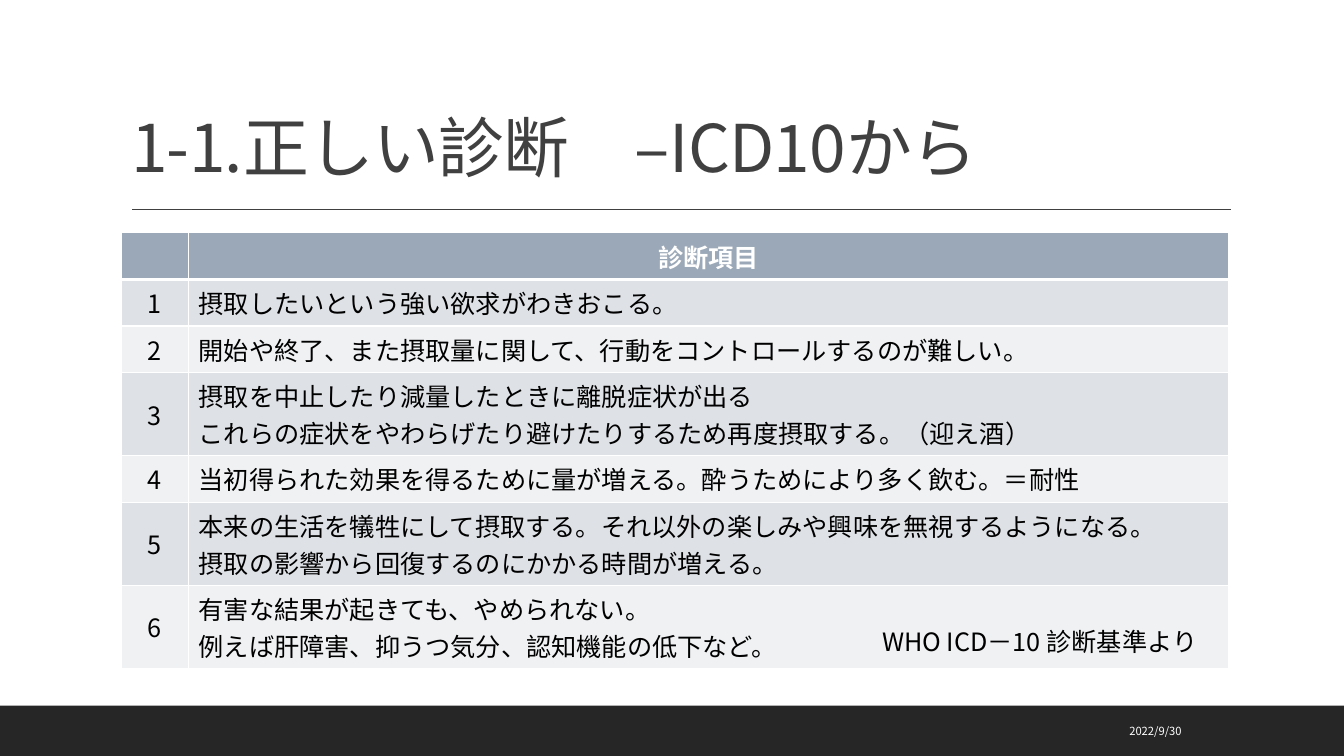
from lxml import etree
from pptx import Presentation
from pptx.dml.color import RGBColor
from pptx.enum import shapes, text
from pptx.oxml import ns
from pptx.util import Inches, Pt

TITLE = "1-1.正しい診断\u3000–ICD10から"
HEADING = "診断項目"
CRITERIA = [
    ["摂取したいという強い欲求がわきおこる。"],
    ["開始や終了、また摂取量に関して、行動をコントロールするのが難しい。"],
    ["摂取を中止したり減量したときに離脱症状が出る",
     "これらの症状をやわらげたり避けたりするため再度摂取する。（迎え酒）"],
    ["当初得られた効果を得るために量が増える。酔うためにより多く飲む。＝耐性"],
    ["本来の生活を犠牲にして摂取する。それ以外の楽しみや興味を無視するようになる。",
     "摂取の影響から回復するのにかかる時間が増える。"],
    ["有害な結果が起きても、やめられない。",
     "例えば肝障害、抑うつ気分、認知機能の低下など。"],
]
SOURCE = "WHO ICD－10 診断基準より"
DATE = "2022/9/30"

COLORS = {"footer": "262626", "title": "404040", "header": "9BA8B7", "odd": "DEE1E6",
          "even": "EFF1F3", "white": "FFFFFF", "black": "000000"}
BODY_FONT, HEADER_FONT = "Noto Sans CJK JP", "Karla"
WIDTH, HEIGHT = 13.33, 7.5
FOOTER_TOP = 7
LEFT, TABLE_TOP = 1.2, 2.31
COLUMNS = [0.67, 10.32]
ROW_BY_LINES = {1: 0.41, 2: 0.71}


def color(name):
    return RGBColor.from_string(COLORS[name])


def add_span(para, words, size, tint, font=BODY_FONT, bold=False):
    span = para.add_run()
    span.text = words
    span.font.size, span.font.bold, span.font.name = Pt(size), bold, font
    span.font.color.rgb = color(tint)
    east_asian = etree.SubElement(span.font._element, ns.qn("a:ea"))
    east_asian.set("typeface", BODY_FONT)
    return span


def add_text(page, frame, words, size, tint, wrap=True):
    box = page.shapes.add_textbox(*map(Inches, frame))
    box.text_frame.word_wrap = wrap
    add_span(box.text_frame.paragraphs[0], words, size, tint)
    return box.text_frame


def add_borders(cell, bottom):
    """Draw white cell edges, with the bottom one of the given width in points."""
    props = cell._tc.get_or_add_tcPr()
    for place, (side, width) in enumerate(zip("LRTB", (1, 1, 1, bottom))):
        edge = etree.Element(ns.qn(f"a:ln{side}"), w=str(Pt(width)))
        fill = etree.SubElement(edge, ns.qn("a:solidFill"))
        etree.SubElement(fill, ns.qn("a:srgbClr"), val=COLORS["white"])
        props.insert(place, edge)


def fill_cell(cell, lines, fill, centred, header=False):
    cell.fill.solid()
    cell.fill.fore_color.rgb = color(fill)
    add_borders(cell, 3 if header else 1)
    cell.vertical_anchor = text.MSO_ANCHOR.TOP if header else text.MSO_ANCHOR.MIDDLE
    for index, line in enumerate(lines):
        frame = cell.text_frame
        para = frame.add_paragraph() if index else frame.paragraphs[0]
        para.alignment = text.PP_ALIGN.CENTER if centred else text.PP_ALIGN.LEFT
        if header:
            add_span(para, line, 18, "white", HEADER_FONT, True)
        else:
            add_span(para, line, 18, "black")


def add_title(page):
    title = page.shapes.title
    title.left, title.top, title.width, title.height = map(Inches, (LEFT, 0.31, 11, 1.59))
    frame = title.text_frame
    frame.auto_size = text.MSO_AUTO_SIZE.NONE
    frame.vertical_anchor = text.MSO_ANCHOR.BOTTOM
    para = frame.paragraphs[0]
    para.alignment, para.line_spacing = text.PP_ALIGN.LEFT, 0.9
    span = add_span(para, TITLE, 47, "title")
    span.font._element.set("spc", "-50")


def add_criteria(page):
    heights = [ROW_BY_LINES[1]] + [ROW_BY_LINES[len(lines)] for lines in CRITERIA]
    frame = (LEFT, TABLE_TOP, sum(COLUMNS), sum(heights))
    table = page.shapes.add_table(len(heights), len(COLUMNS), *map(Inches, frame)).table
    for column, width in zip(table.columns, COLUMNS):
        column.width = Inches(width)
    for row, height in zip(table.rows, heights):
        row.height = Inches(height)
    fill_cell(table.cell(0, 0), [""], "header", True, header=True)
    fill_cell(table.cell(0, 1), [HEADING], "header", True, header=True)
    for number, lines in enumerate(CRITERIA, 1):
        band = "odd" if number % 2 else "even"
        fill_cell(table.cell(number, 0), [str(number)], band, True)
        fill_cell(table.cell(number, 1), lines, band, False)


def main():
    deck = Presentation()
    deck.slide_width, deck.slide_height = Inches(WIDTH), Inches(HEIGHT)
    page = deck.slides.add_slide(deck.slide_layouts[5])

    footer = page.shapes.add_shape(shapes.MSO_SHAPE.RECTANGLE, 0, Inches(FOOTER_TOP),
                                   Inches(WIDTH), Inches(HEIGHT - FOOTER_TOP))
    footer.shadow.inherit = False
    footer.fill.solid()
    footer.fill.fore_color.rgb = color("footer")
    footer.line.fill.background()

    rule = page.shapes.add_connector(shapes.MSO_CONNECTOR.STRAIGHT,
                                     *map(Inches, (1.31, 2.08, 12.21, 2.08)))
    rule.line.color.rgb, rule.line.width = color("title"), Pt(1)
    etree.SubElement(rule._element.spPr, ns.qn("a:effectLst"))

    add_title(page)
    add_criteria(page)

    date = add_text(page, (8.99, 7.05, 2.83, 0.4), DATE, 8, "white")
    date.vertical_anchor = text.MSO_ANCHOR.MIDDLE
    date.paragraphs[0].alignment = text.PP_ALIGN.RIGHT
    source = add_text(page, (8.65, 6.16, 3.55, 0.4), SOURCE, 18, "black", wrap=False)
    source.auto_size = text.MSO_AUTO_SIZE.SHAPE_TO_FIT_TEXT

    deck.save("out.pptx")


if __name__ == "__main__":
    main()
